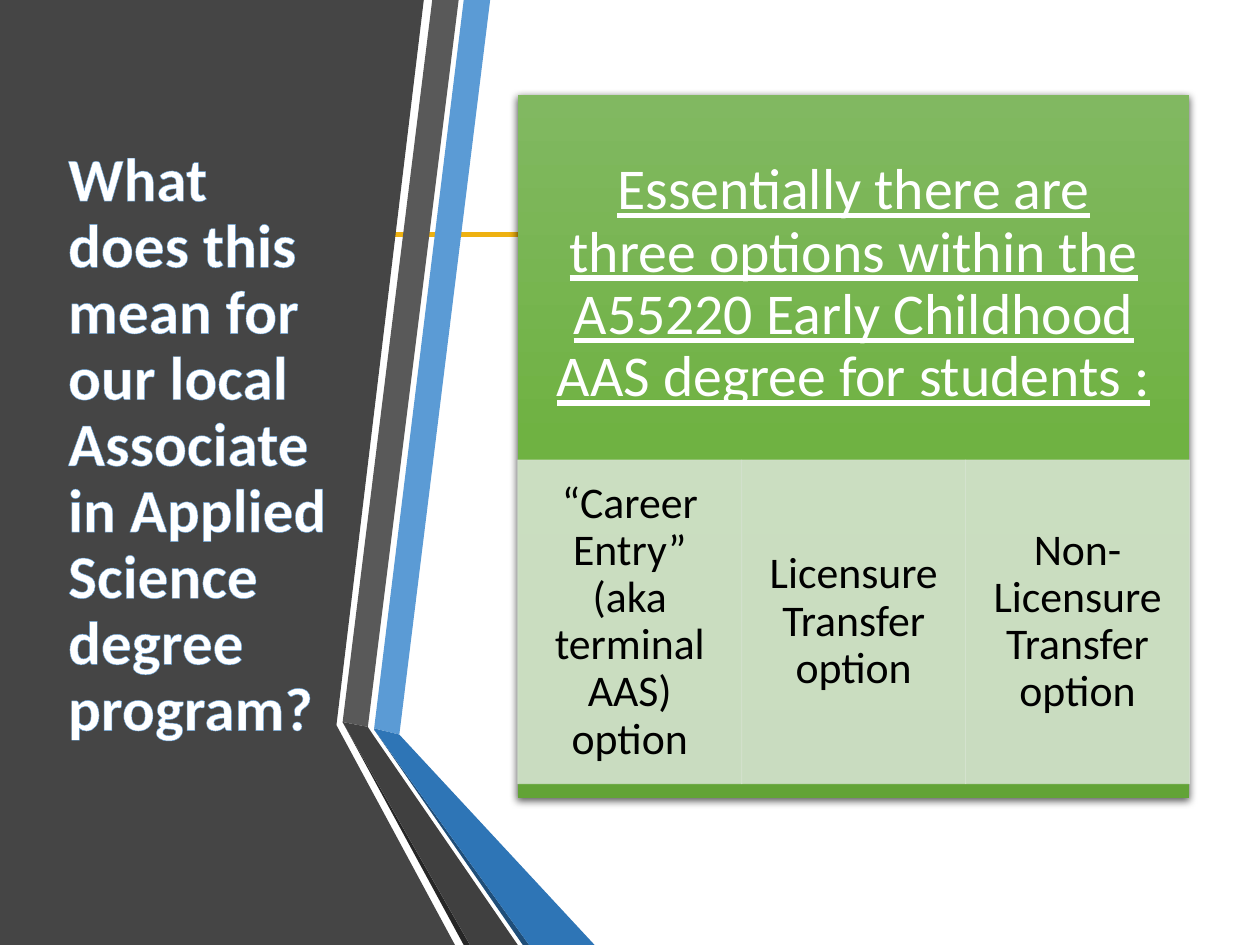
from lxml import etree
from pptx import Presentation
from pptx.dml.color import RGBColor
from pptx.enum.shapes import MSO_CONNECTOR, MSO_SHAPE
from pptx.enum.text import MSO_ANCHOR, MSO_AUTO_SIZE, PP_ALIGN
from pptx.oxml import parse_xml
from pptx.oxml.ns import nsdecls, qn
from pptx.util import Pt

LINE, RECTANGLE = MSO_CONNECTOR.STRAIGHT, MSO_SHAPE.RECTANGLE
MIDDLE, NO_FIT = MSO_ANCHOR.MIDDLE, MSO_AUTO_SIZE.NONE
LEFT, CENTER = PP_ALIGN.LEFT, PP_ALIGN.CENTER

THEME = {
    "font": "Calibri",
    "title_size": 35, "header_size": 33, "option_size": 25,
    "white": "FFFFFF", "black": "000000", "accent": "EEB111",
    "panel": "454545", "blue": "5B9BD5", "blue_fold": "2E75B6",
    "blue_edge": "1F4E79", "gray": "595959", "gray_fold": "404040",
    "gray_edge": "262626", "option": "D5E3CF",
    "card": [(0, "81B861"), (50, "6FB242"), (100, "62A336")],
}


def color(name):
    return RGBColor.from_string(THEME[name])


def write_text(shape, text, size, color_name, alignment, insets, **font_format):
    frame = shape.text_frame
    frame.text = text
    side, end = insets
    frame_format = {
        "word_wrap": True, "auto_size": NO_FIT, "vertical_anchor": MIDDLE,
        "margin_left": Pt(side), "margin_right": Pt(side),
        "margin_top": Pt(end), "margin_bottom": Pt(end),
    }
    for name, value in frame_format.items():
        setattr(frame, name, value)
    paragraph = frame.paragraphs[0]
    paragraph.alignment = alignment
    paragraph.line_spacing = 0.9
    paragraph.space_before = Pt(0)
    font = paragraph.runs[0].font
    font.color.rgb = color(color_name)
    font_format.update(name=THEME["font"], size=Pt(THEME[size]))
    for name, value in font_format.items():
        setattr(font, name, value)
    return font


presentation = Presentation()
presentation.slide_width, presentation.slide_height = Pt(720), Pt(540)
slide = presentation.slides.add_slide(presentation.slide_layouts[5])
shapes = slide.shapes

# Accent line
accent = shapes.add_connector(LINE, Pt(49.7), Pt(133.9), Pt(611.3), Pt(133.9))
accent.line.color.rgb = color("accent")
accent.line.width = Pt(3)
etree.SubElement(accent._element.spPr, qn("a:effectLst"))

# Dark panel and folded ribbons, in points
outlines = [
    ("panel", [(0, 0), (242.2, 0), (192.3, 414.4), (260, 540), (0, 540)]),
    ("blue", [(213.8, 416.2), (228.2, 419.8), (280.1, 0), (265, 0)]),
    ("gray", [(262.1, 0), (247, 0), (195.8, 412.6), (210.2, 415.4)]),
    ("gray_edge", [(195.8, 412.6), (265, 540), (268.6, 540)]),
    ("blue_edge", [(213.8, 416.9), (298.8, 540), (302.4, 540)]),
    ("blue_fold", [(213.8, 416.9), (302.4, 540), (339.8, 540),
                   (228.2, 419.8), (213.8, 416.2)]),
    ("gray_fold", [(295.9, 540), (213.1, 419.8), (210.2, 415.4),
                   (195.8, 412.6), (268.6, 540)]),
]
for color_name, points in outlines:
    corners = [(Pt(x), Pt(y)) for x, y in points]
    builder = shapes.build_freeform(*corners[0], scale=1.0)
    builder.add_line_segments(corners[1:], close=True)
    outline = builder.convert_to_shape()
    outline.shadow.inherit = False
    outline.fill.solid()
    outline.fill.fore_color.rgb = color(color_name)
    outline.line.fill.background()

# Title, brought in front of the panel
title = shapes.title
title.left, title.top, title.width, title.height = Pt(31.7), Pt(54), Pt(164.2), Pt(401.8)
title_font = write_text(
    title, "What does this mean for our local Associate in Applied Science degree program?",
    "title_size", "white", LEFT, (7.2, 3.6), bold=True)
title_font._element.insert(0, parse_xml(
    f'<a:ln w="0" {nsdecls("a")}><a:solidFill><a:srgbClr val="{THEME["blue"]}"/>'
    "</a:solidFill></a:ln>"))
shapes._spTree.append(title._element)

# Green card with gradient and soft shadow
card_left, card_top, card_width, card_height = 295.9, 54, 383.8, 401.8
card = shapes.add_shape(RECTANGLE, Pt(card_left), Pt(card_top), Pt(card_width), Pt(card_height))
card.line.fill.background()
stops = "".join(f'<a:gs pos="{position * 1000}"><a:srgbClr val="{value}"/></a:gs>'
                for position, value in THEME["card"])
card._element.spPr.find(qn("a:prstGeom")).addnext(parse_xml(
    f'<a:gradFill {nsdecls("a")}><a:gsLst>{stops}</a:gsLst>'
    '<a:lin ang="5400000" scaled="0"/></a:gradFill>'))
card._element.spPr.append(parse_xml(
    f'<a:effectLst {nsdecls("a")}><a:outerShdw blurRad="{Pt(4.5)}" dist="{Pt(1.5)}" '
    f'dir="5400000" algn="ctr" rotWithShape="0"><a:srgbClr val="{THEME["black"]}">'
    '<a:alpha val="63000"/></a:srgbClr></a:outerShdw></a:effectLst>'))

# Card heading
heading = shapes.add_textbox(Pt(card_left), Pt(card_top), Pt(card_width), Pt(217.4))
write_text(
    heading, "Essentially there are three options within the A55220 Early Childhood "
    "AAS degree for students :",
    "header_size", "white", CENTER, (18.5, 18.5), underline=True)

# Three equal options
options = ["“Career Entry” (aka terminal AAS) option",
           "Licensure Transfer option",
           "Non-Licensure Transfer option"]
option_width = card_width / len(options)
for index, text in enumerate(options):
    option = shapes.add_shape(RECTANGLE, Pt(card_left + index * option_width), Pt(262.9),
                              Pt(option_width), Pt(185))
    option.shadow.inherit = False
    option.fill.solid()
    option.line.width = Pt(0.5)
    for paint in (option.fill.fore_color, option.line.color):
        paint.rgb = color("option")
    for value in option._element.spPr.iter(qn("a:srgbClr")):
        etree.SubElement(value, qn("a:alpha"), val="90000")
    write_text(option, text, "option_size", "black", CENTER, (14, 2.5))

presentation.save("out.pptx")
